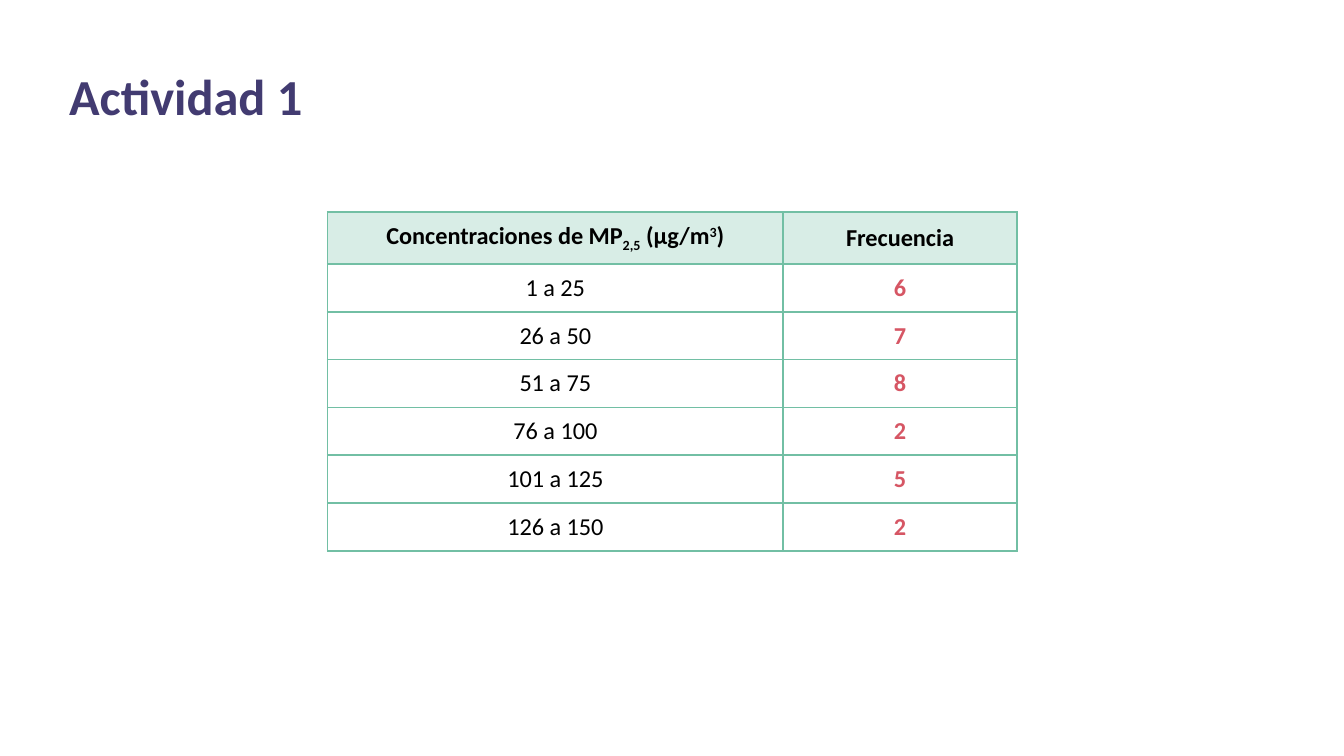
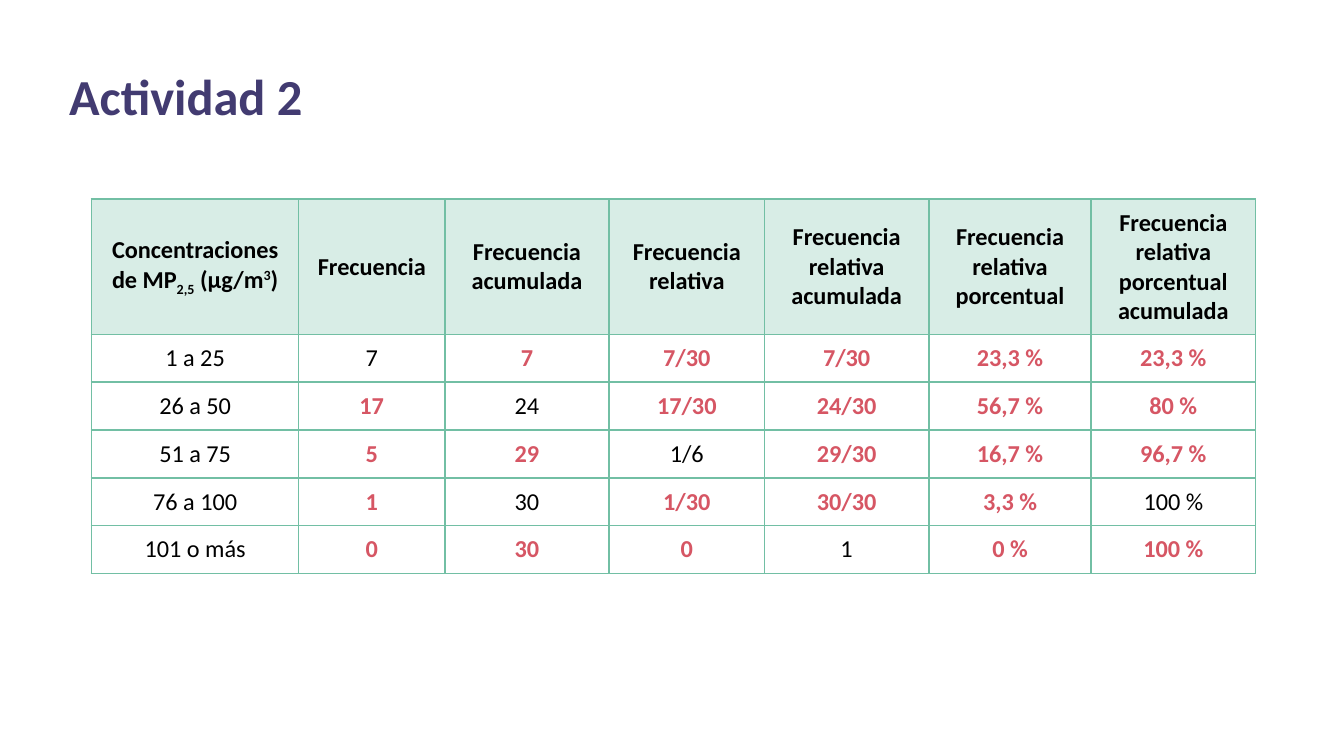
from lxml.etree import SubElement
from pptx import Presentation
from pptx.dml.color import RGBColor
from pptx.enum.text import MSO_ANCHOR, PP_ALIGN
from pptx.oxml.ns import qn
from pptx.util import Pt

FONT = "Calibri"
TITLE, GRID, HEADER, ANSWER, GIVEN = "423B71", "72BFA4", "D8EDE6", "D65664", "000000"
ROW_HEIGHT = 25.6
CELL_MARGIN = 4.8
CONCENTRATION = [("Concentraciones de MP", 0), ("2,5", -25), (" (μg/m", 0), ("3", 30), (")", 0)]


def color(value):
    """Turn a hex string into a colour."""
    return RGBColor.from_string(value)


class Deck:
    """Hold the shared style and the current slide."""

    def __init__(self):
        """Start an empty widescreen presentation."""
        self.presentation = Presentation()
        self.presentation.slide_width = Pt(720)
        self.presentation.slide_height = Pt(405)
        self.slide = None

    def activity(self, heading):
        """Add a slide with its title."""
        self.slide = self.presentation.slides.add_slide(self.presentation.slide_layouts[6])
        title = self.slide.shapes.add_textbox(Pt(31.7), Pt(32.4), Pt(482.4), Pt(38.2))
        frame = title.text_frame
        frame.word_wrap = True
        frame.margin_left = frame.margin_right = Pt(5.4)
        frame.margin_top = frame.margin_bottom = Pt(2.7)
        frame.text = heading
        self.style(frame.paragraphs[0], 27, TITLE, True)

    def style(self, paragraph, size, ink, bold):
        """Format every run of a paragraph."""
        for run in paragraph.runs:
            run.font.name = FONT
            run.font.size = Pt(size)
            run.font.bold = bold
            run.font.color.rgb = color(ink)

    def borders(self, cell):
        """Draw the four grid lines of a cell."""
        properties = cell._tc.get_or_add_tcPr()
        for side in ("a:lnL", "a:lnR", "a:lnT", "a:lnB"):
            line = SubElement(properties, qn(side), w=str(Pt(1)))
            fill = SubElement(line, qn("a:solidFill"))
            SubElement(fill, qn("a:srgbClr"), val=GRID)

    def cell(self, cell, content, ink, bold, background=None):
        """Fill one cell with plain text or with (text, baseline) pieces."""
        self.borders(cell)
        if background:
            cell.fill.solid()
            cell.fill.fore_color.rgb = color(background)
        else:
            cell.fill.background()
        cell.vertical_anchor = MSO_ANCHOR.MIDDLE
        cell.margin_left = cell.margin_right = Pt(CELL_MARGIN)
        cell.margin_top = cell.margin_bottom = Pt(CELL_MARGIN)
        if isinstance(content, str):
            cell.text_frame.text = content
        else:
            for text, baseline in content:
                run = cell.text_frame.paragraphs[0].add_run()
                run.text = text
                if baseline:
                    run._r.get_or_add_rPr().set("baseline", str(baseline * 1000))
        for paragraph in cell.text_frame.paragraphs:
            paragraph.alignment = PP_ALIGN.CENTER
            self.style(paragraph, 13, ink, bold)

    def table(self, left, top, widths, header_height, headings, rows, given=()):
        """Add a frequency table; answers are red except at the given (row, column)."""
        heights = [header_height] + [ROW_HEIGHT] * len(rows)
        table = self.slide.shapes.add_table(
            len(heights), len(widths), Pt(left), Pt(top), Pt(sum(widths)), Pt(sum(heights))
        ).table
        table.first_row = table.horz_banding = False
        for column, width in zip(table.columns, widths):
            column.width = Pt(width)
        for row, height in zip(table.rows, heights):
            row.height = Pt(height)
        for column, heading in enumerate(headings):
            self.cell(table.cell(0, column), heading, GIVEN, True, HEADER)
        for row, values in enumerate(rows, 1):
            for column, value in enumerate(values):
                known = column == 0 or (row, column) in given
                self.cell(table.cell(row, column), value, GIVEN if known else ANSWER, not known)


def main():
    """Build both activities."""
    deck = Deck()

    deck.activity("Actividad 1")
    deck.table(
        175.5, 113.6, [244, 125.3], 27.9,
        [CONCENTRATION, "Frecuencia"],
        [
            ("1 a 25", "6"),
            ("26 a 50", "7"),
            ("51 a 75", "8"),
            ("76 a 100", "2"),
            ("101 a 125", "5"),
            ("126 a 150", "2"),
        ],
    )

    deck.activity("Actividad 2")
    deck.table(
        49, 106.6, [111, 78.3, 88, 83.3, 88, 87, 88], 72.6,
        [
            CONCENTRATION,
            "Frecuencia",
            "Frecuencia acumulada",
            "Frecuencia relativa",
            "Frecuencia relativa acumulada",
            "Frecuencia relativa porcentual",
            "Frecuencia relativa porcentual\nacumulada",
        ],
        [
            ("1 a 25", "7", "7", "7/30", "7/30", "23,3 %", "23,3 %"),
            ("26 a 50", "17", "24", "17/30", "24/30", "56,7 %", "80 %"),
            ("51 a 75", "5", "29", "1/6", "29/30", "16,7 %", "96,7 %"),
            ("76 a 100", "1", "30", "1/30", "30/30", "3,3 %", "100 %"),
            ("101 o más", "0", "30", "0", "1", "0 %", "100 %"),
        ],
        given={(1, 1), (2, 2), (3, 3), (4, 2), (4, 6), (5, 4)},
    )

    deck.presentation.save("out.pptx")


if __name__ == "__main__":
    main()
